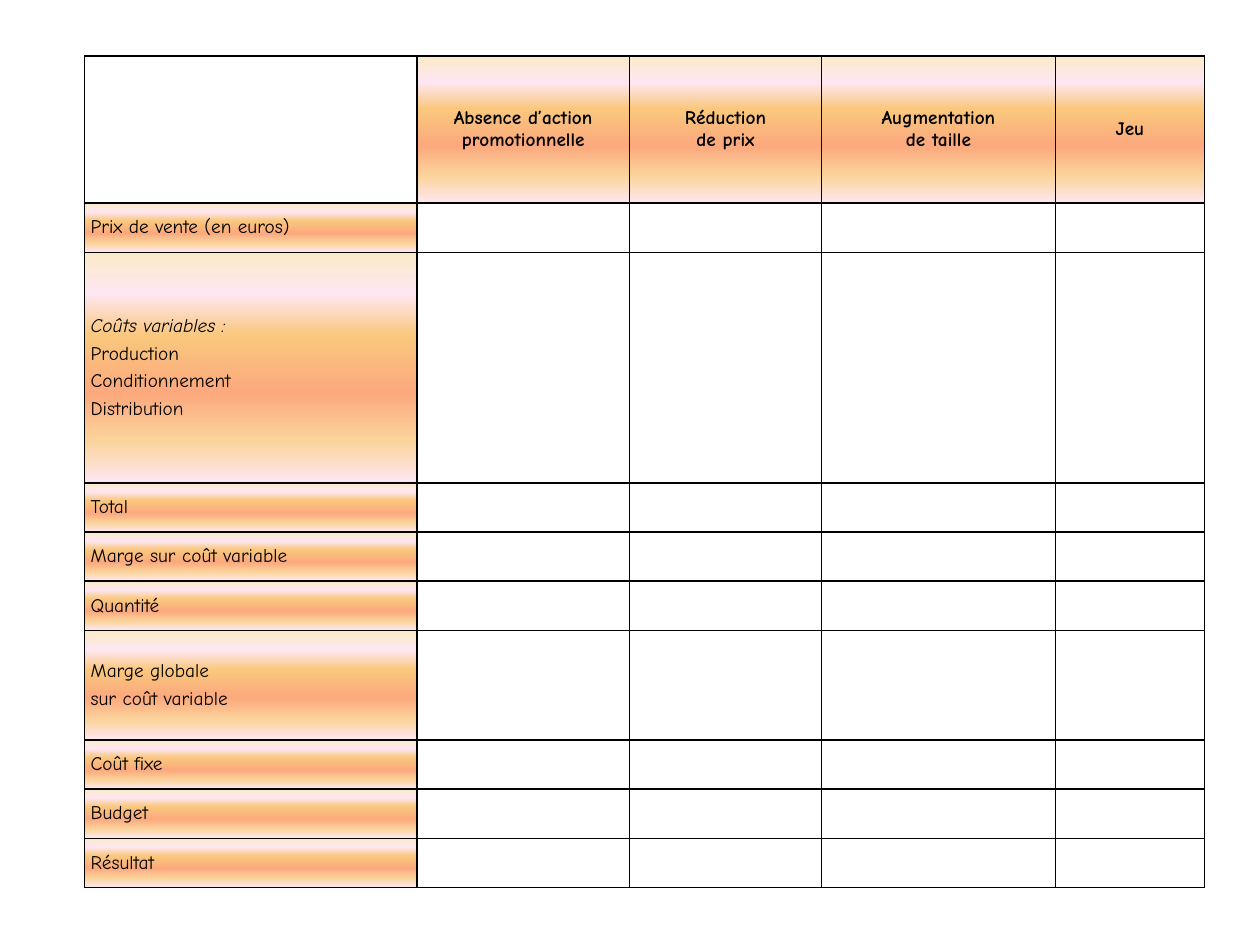
from dataclasses import dataclass

from lxml import etree
from pptx import Presentation
from pptx.dml.color import RGBColor
from pptx.enum import text
from pptx.oxml import ns
from pptx.util import Pt


@dataclass(frozen=True)
class Theme:
    font: str = "Comic Neue"
    size: float = 11
    ink: str = "000000"
    border_width: float = 1
    label_gradient: tuple = ((0, "FBEAC7"), (18, "FEE7F2"), (36, "FAC77D"),
                             (61, "FBA97D"), (82, "FBD49C"), (100, "FEE7F2"))


# In a label, \n starts a paragraph and \v breaks a line.
COLUMNS = [("", 190), ("Absence d’action promotionnelle", 121.7),
           ("Réduction\vde prix", 109.5), ("Augmentation\vde taille", 133.9),
           ("Jeu", 85)]
HEADER_HEIGHT = 84.2
ROW_HEIGHT = 28.1
ROWS = [("Prix de vente (en euros)", ROW_HEIGHT),
        ("Coûts variables :\nProduction\nConditionnement\nDistribution", 131.8),
        ("Total", ROW_HEIGHT),
        ("Marge sur coût variable", ROW_HEIGHT),
        ("Quantité", ROW_HEIGHT),
        ("Marge globale\nsur coût variable", 62.6),
        ("Coût fixe", ROW_HEIGHT),
        ("Budget", ROW_HEIGHT),
        ("Résultat", ROW_HEIGHT)]
ITALIC_LINE = "Coûts variables :"


def set_attributes(target, values):
    for name, value in values.items():
        setattr(target, name, value)


def add_element(parent, tag, **attributes):
    return etree.SubElement(parent, ns.qn(tag), attributes)


class SlideBuilder:
    def __init__(self, slide, theme):
        self.slide = slide
        self.theme = theme

    def add_table(self, left, top, columns, rows):
        """Add a table whose first row and first column hold the labels."""
        widths = [width for _, width in columns]
        heights = [HEADER_HEIGHT] + [height for _, height in rows]
        table = self.slide.shapes.add_table(
            len(heights), len(widths), Pt(left), Pt(top),
            Pt(sum(widths)), Pt(sum(heights))).table
        set_attributes(table, {"first_row": False, "horz_banding": False})
        for column, width in zip(table.columns, widths):
            column.width = Pt(width)
        for row, height in zip(table.rows, heights):
            row.height = Pt(height)
        for cell in table.iter_cells():
            set_attributes(cell, {
                "margin_left": Pt(3.6), "margin_right": Pt(3.6),
                "margin_top": 0, "margin_bottom": 0,
                "vertical_anchor": text.MSO_ANCHOR.MIDDLE})
            self.add_borders(cell)
        for index, (label, _) in enumerate(columns):
            self.fill_label(table.cell(0, index), label,
                            text.PP_ALIGN.CENTER, bold=True)
        for index, (label, _) in enumerate(rows, start=1):
            self.fill_label(table.cell(index, 0), label, text.PP_ALIGN.JUSTIFY)
            for column in range(1, len(columns)):
                table.cell(index, column).fill.background()

    def add_borders(self, cell):
        properties = cell._tc.get_or_add_tcPr()
        for tag in ("a:lnL", "a:lnR", "a:lnT", "a:lnB"):
            line = add_element(properties, tag,
                               w=str(Pt(self.theme.border_width)))
            fill = add_element(line, "a:solidFill")
            add_element(fill, "a:srgbClr", val=self.theme.ink)

    def add_gradient(self, cell):
        gradient = add_element(cell._tc.get_or_add_tcPr(), "a:gradFill")
        stops = add_element(gradient, "a:gsLst")
        for percent, color in self.theme.label_gradient:
            stop = add_element(stops, "a:gs", pos=str(percent * 1000))
            add_element(stop, "a:srgbClr", val=color)
        add_element(gradient, "a:lin", ang="5400000", scaled="0")

    def fill_label(self, cell, label, alignment, bold=False):
        if not label:
            cell.fill.background()
            return
        self.add_gradient(cell)
        cell.text_frame.text = label
        for paragraph in cell.text_frame.paragraphs:
            set_attributes(paragraph, {"alignment": alignment,
                                       "space_after": Pt(3)})
            for run in paragraph.runs:
                set_attributes(run.font, {
                    "name": self.theme.font, "size": Pt(self.theme.size),
                    "bold": bold, "italic": run.text == ITALIC_LINE})
                run.font.color.rgb = RGBColor.from_string(self.theme.ink)


def main():
    presentation = Presentation()
    set_attributes(presentation, {"slide_width": Pt(720),
                                  "slide_height": Pt(540)})
    slide = presentation.slides.add_slide(presentation.slide_layouts[6])
    SlideBuilder(slide, Theme()).add_table(48.2, 31.9, COLUMNS, ROWS)
    presentation.save("out.pptx")


if __name__ == "__main__":
    main()
